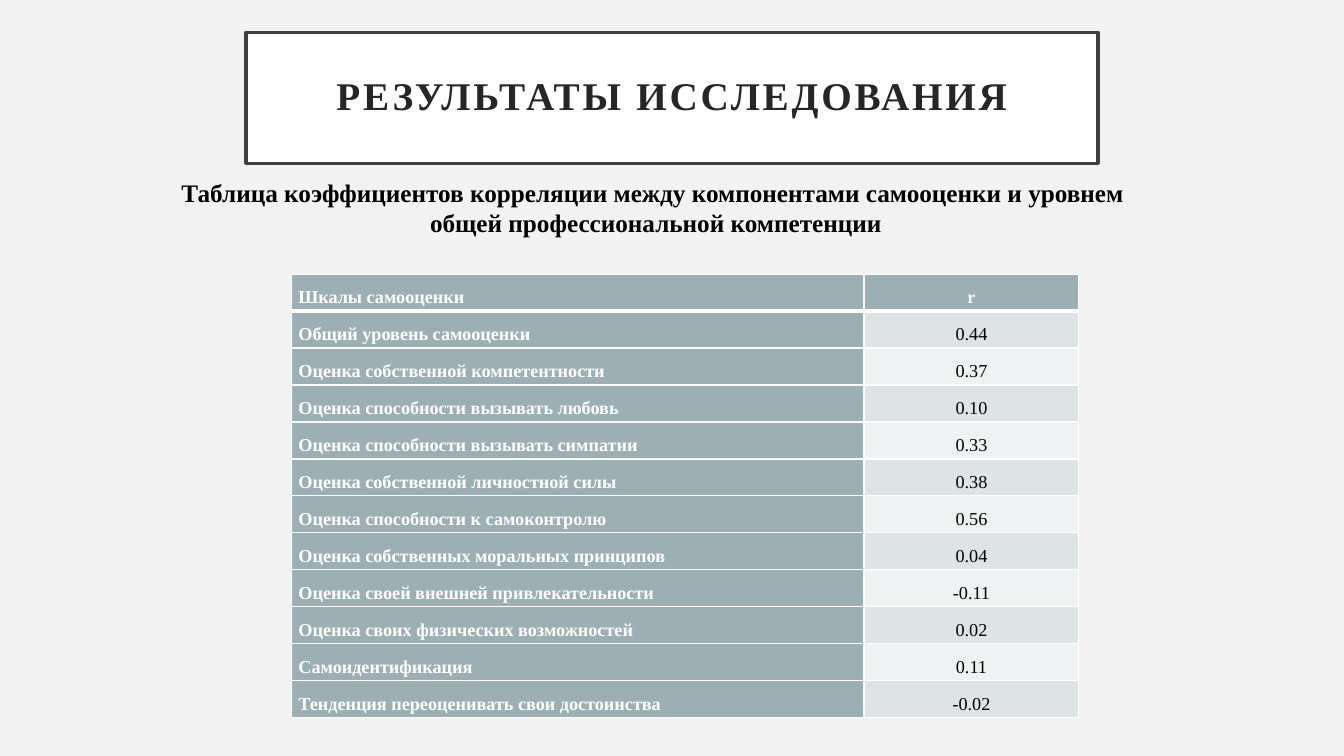
from dataclasses import dataclass

from lxml.etree import SubElement
from pptx import Presentation
from pptx.dml.color import RGBColor
from pptx.enum.text import MSO_ANCHOR, MSO_AUTO_SIZE, PP_ALIGN
from pptx.oxml import parse_xml
from pptx.oxml.ns import nsdecls, qn
from pptx.slide import Slide
from pptx.table import _Cell
from pptx.text.text import _Paragraph
from pptx.util import Inches, Pt


@dataclass(frozen=True)
class Theme:
    font: str = "Times New Roman"
    background: str = "F2F2F2"
    white: str = "FFFFFF"
    black: str = "000000"
    title_text: str = "262626"
    title_border: str = "404040"
    heading_fill: str = "9BAFB5"
    bands: tuple[str, str] = ("DEE3E5", "EFF2F3")
    title_size: int = 28
    caption_size: int = 18
    table_size: int = 13
    grid_width: int = 1
    header_rule_width: int = 3


@dataclass(frozen=True)
class Correlation:
    scale: str
    coefficient: str


THEME = Theme()
HEADER = Correlation("Шкалы самооценки", "r")
CORRELATIONS = [
    Correlation("Общий уровень самооценки", "0.44"),
    Correlation("Оценка собственной компетентности", "0.37"),
    Correlation("Оценка способности вызывать любовь", "0.10"),
    Correlation("Оценка способности вызывать симпатии", "0.33"),
    Correlation("Оценка собственной личностной силы", "0.38"),
    Correlation("Оценка способности к самоконтролю", "0.56"),
    Correlation("Оценка собственных моральных принципов", "0.04"),
    Correlation("Оценка своей внешней привлекательности", "-0.11"),
    Correlation("Оценка своих физических возможностей", "0.02"),
    Correlation("Самоидентификация", "0.11"),
    Correlation("Тенденция переоценивать свои достоинства", "-0.02"),
]
CAPTION_LINES = [
    "Таблица коэффициентов корреляции между компонентами самооценки и уровнем ",
    "общей профессиональной компетенции",
]


def rgb(color: str) -> RGBColor:
    return RGBColor.from_string(color)


def format_paragraph(paragraph: _Paragraph, size: int, color: str,
                     bold: bool = True, align: PP_ALIGN = PP_ALIGN.CENTER) -> None:
    paragraph.alignment = align
    font = paragraph.font
    font.name = THEME.font
    font.size = Pt(size)
    font.bold = bold
    font.color.rgb = rgb(color)


def add_title(slide: Slide) -> None:
    title = slide.shapes.title
    title.left, title.top = Inches(2.44), Inches(0.32)
    title.width, title.height = Inches(8.45), Inches(1.3)
    title.fill.solid()
    title.fill.fore_color.rgb = rgb(THEME.white)
    title.line.color.rgb = rgb(THEME.title_border)
    title.line.width = Pt(2.5)

    frame = title.text_frame
    frame.text = "РЕЗУЛЬТАТЫ ИССЛЕДОВАНИЯ"
    frame.word_wrap = True
    frame.auto_size = MSO_AUTO_SIZE.NONE
    frame.vertical_anchor = MSO_ANCHOR.MIDDLE
    frame.margin_left = frame.margin_right = Inches(0.2)
    frame.margin_top = frame.margin_bottom = Inches(0.2)
    heading = frame.paragraphs[0]
    format_paragraph(heading, THEME.title_size, THEME.title_text)
    heading.line_spacing = 0.9
    heading.runs[0].font._element.set("spc", "200")


def add_caption(slide: Slide) -> None:
    caption = slide.shapes.add_textbox(
        Inches(1.65), Inches(1.71), Inches(9.71), Inches(1.01))
    frame = caption.text_frame
    frame.word_wrap = False
    frame.text = "\n".join(CAPTION_LINES)
    for line in frame.paragraphs:
        format_paragraph(line, THEME.caption_size, THEME.black)


def set_borders(cell: _Cell, top: int, bottom: int) -> None:
    """Draw all four edges; the schema wants them ahead of the cell fill."""
    widths = {"lnL": THEME.grid_width, "lnR": THEME.grid_width,
              "lnT": top, "lnB": bottom}
    properties = cell._tc.get_or_add_tcPr()
    for position, (edge, width) in enumerate(widths.items()):
        border = parse_xml(f'<a:{edge} {nsdecls("a")} w="{Pt(width)}"/>')
        fill = SubElement(border, qn("a:solidFill"))
        SubElement(fill, qn("a:srgbClr")).set("val", THEME.white)
        properties.insert(position, border)


def fill_cell(cell: _Cell, text: str, fill: str, color: str,
              bold: bool, align: PP_ALIGN) -> None:
    cell.text = text
    cell.vertical_anchor = MSO_ANCHOR.MIDDLE
    cell.margin_left = cell.margin_right = Inches(0.07)
    cell.margin_top = cell.margin_bottom = 0
    cell.fill.solid()
    cell.fill.fore_color.rgb = rgb(fill)
    paragraph = cell.text_frame.paragraphs[0]
    format_paragraph(paragraph, THEME.table_size, color, bold, align)
    paragraph.line_spacing = 1.5
    paragraph.space_after = Pt(8)


def add_correlation_table(slide: Slide) -> None:
    rows = [HEADER, *CORRELATIONS]
    table = slide.shapes.add_table(
        len(rows), 2, Inches(2.89), Inches(2.72), Inches(7.81), Inches(4.4)).table
    table.columns[0].width = Inches(5.68)
    table.columns[1].width = Inches(2.13)

    for index, row in enumerate(rows):
        is_header = index == 0
        scale_cell, coefficient_cell = table.cell(index, 0), table.cell(index, 1)
        fill_cell(scale_cell, row.scale, THEME.heading_fill, THEME.white,
                  True, PP_ALIGN.LEFT)
        fill_cell(coefficient_cell, row.coefficient,
                  THEME.heading_fill if is_header else THEME.bands[(index - 1) % 2],
                  THEME.white if is_header else THEME.black,
                  is_header, PP_ALIGN.CENTER)
        top = THEME.header_rule_width if index == 1 else THEME.grid_width
        bottom = THEME.header_rule_width if is_header else THEME.grid_width
        for cell in (scale_cell, coefficient_cell):
            set_borders(cell, top, bottom)


def main() -> None:
    presentation = Presentation()
    presentation.slide_width = Inches(13.33)
    presentation.slide_height = Inches(7.5)
    title_only = presentation.slide_layouts[5]
    slide = presentation.slides.add_slide(title_only)
    slide.background.fill.solid()
    slide.background.fill.fore_color.rgb = rgb(THEME.background)
    add_title(slide)
    add_correlation_table(slide)
    add_caption(slide)
    presentation.save("out.pptx")


if __name__ == "__main__":
    main()
